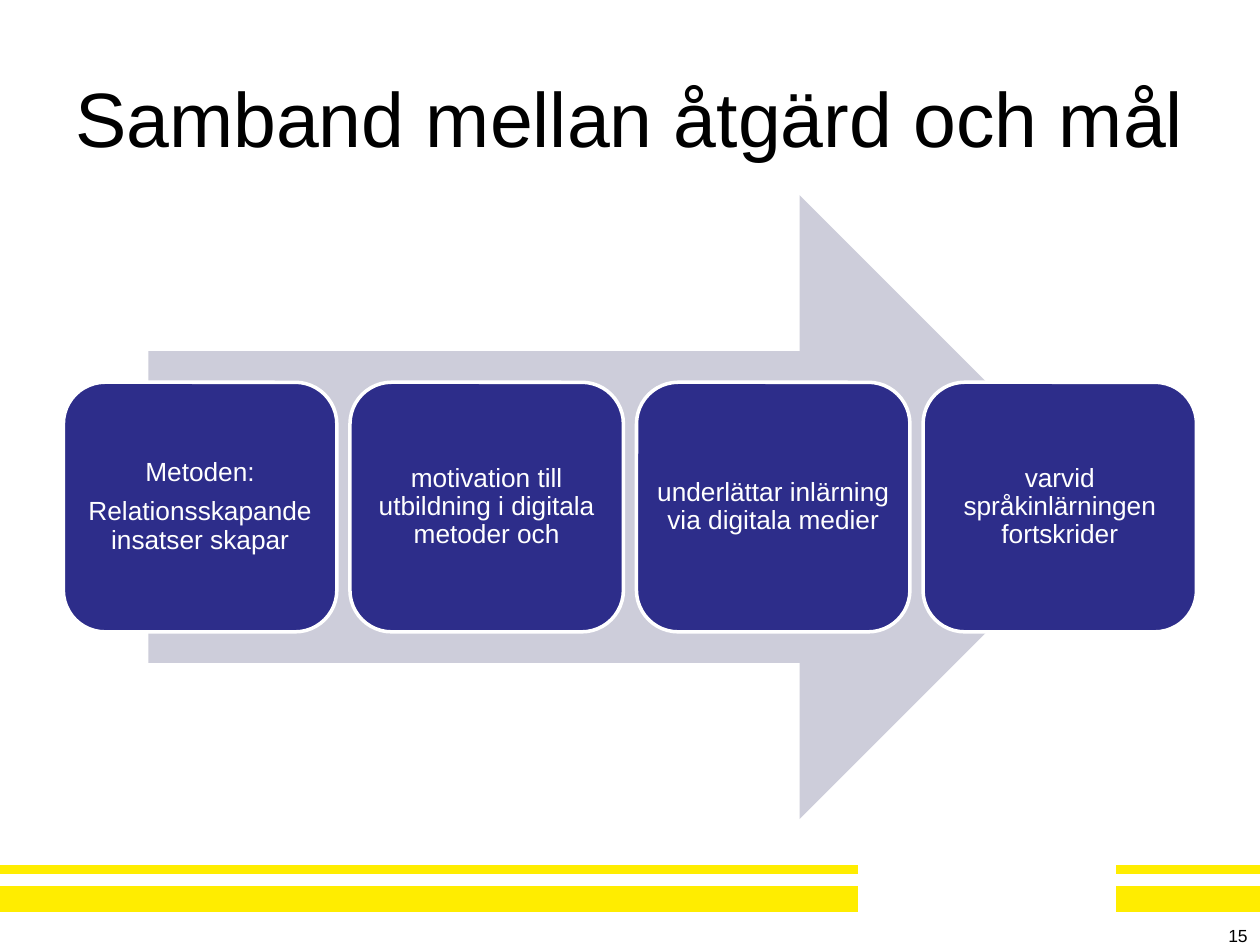
from lxml import etree
from pptx import Presentation
from pptx.dml.color import RGBColor
from pptx.enum.shapes import MSO_CONNECTOR as Connector, MSO_SHAPE as Shape
from pptx.enum.text import MSO_ANCHOR as Anchor, PP_ALIGN as Align
from pptx.oxml.ns import qn
from pptx.util import Pt

BLACK = RGBColor(0x00, 0x00, 0x00)
WHITE = RGBColor(0xFF, 0xFF, 0xFF)
YELLOW = RGBColor(0xFF, 0xED, 0x00)
NAVY = RGBColor(0x2D, 0x2D, 0x8A)
PALE = RGBColor(0xCD, 0xCD, 0xDA)

PAGE_WIDTH, PAGE_HEIGHT = 720, 540
STEPS = [
    ["Metoden:", "Relationsskapande insatser skapar"],
    ["motivation till utbildning i digitala metoder och"],
    ["underlättar inlärning via digitala medier"],
    ["varvid språkinlärningen fortskrider"],
]


def write(para, text, size, color, align):
    para.alignment = align
    span = para.add_run()
    span.text = text
    span.font.name = "Arial"
    span.font.size = Pt(size)
    span.font.color.rgb = color


def add_label(page, box, text, size, align, anchor):
    frame = page.shapes.add_textbox(*map(Pt, box)).text_frame
    frame.word_wrap = True
    frame.vertical_anchor = anchor
    write(frame.paragraphs[0], text, size, BLACK, align)


def add_block(page, kind, box, fill):
    block = page.shapes.add_shape(kind, *map(Pt, box))
    block.shadow.inherit = False
    block.fill.solid()
    block.fill.fore_color.rgb = fill
    block.line.fill.background()
    return block


def add_stripes(page, box):
    """A thin and a thick stripe, each broken by the same gap."""
    left, top, width, height = box
    gap_start, gap_end = left + 490.25, left + 638
    for y, weight in ((top, 5), (top + height, 15)):
        for start, end in ((left, gap_start), (gap_end, left + width)):
            stripe = page.shapes.add_connector(
                Connector.STRAIGHT, Pt(start), Pt(y), Pt(end), Pt(y))
            stripe.line.color.rgb = YELLOW
            stripe.line.width = Pt(weight)
            etree.SubElement(stripe._element.spPr, qn("a:effectLst"))


def add_step(page, box, lines):
    card = add_block(page, Shape.ROUNDED_RECTANGLE, box, NAVY)
    card.line.color.rgb = WHITE
    card.line.width = Pt(2)
    frame = card.text_frame
    frame.word_wrap = True
    frame.vertical_anchor = Anchor.MIDDLE
    frame.margin_left = frame.margin_right = Pt(4.5)
    frame.margin_top = frame.margin_bottom = Pt(4.5)
    for index, line in enumerate(lines):
        para = frame.add_paragraph() if index else frame.paragraphs[0]
        para.line_spacing = 0.9
        para.space_after = Pt(6)
        write(para, line, 15, WHITE, Align.CENTER)


def add_process(page, box, steps):
    """Equal cards in a row, centred on a wide arrow."""
    left, top, width, height = box
    inset = width * 0.075
    add_block(page, Shape.RIGHT_ARROW,
              (left + inset, top, width - 2 * inset, height), PALE)

    gap = 7.5
    card_width = (width - gap * (len(steps) - 1)) / len(steps)
    card_height = height * 0.4
    card_top = top + (height - card_height) / 2
    for index, lines in enumerate(steps):
        card_left = left + index * (card_width + gap)
        add_step(page, (card_left, card_top, card_width, card_height), lines)


def main():
    deck = Presentation()
    deck.slide_width, deck.slide_height = Pt(PAGE_WIDTH), Pt(PAGE_HEIGHT)
    page = deck.slides.add_slide(deck.slide_layouts[6])

    # Footer stripes
    add_stripes(page, (0, 496.75, PAGE_WIDTH, 17))
    # Title and page number
    add_label(page, (14, 21.5, 692, 90), "Samband mellan åtgärd och mål",
              44, Align.CENTER, Anchor.MIDDLE)
    add_label(page, (552, 525, 168, 15), "15", 10, Align.RIGHT, Anchor.TOP)
    # Arrow with the four steps
    add_process(page, (36.25, 111.5, 647.5, 356.5), STEPS)

    deck.save("out.pptx")


if __name__ == "__main__":
    main()
